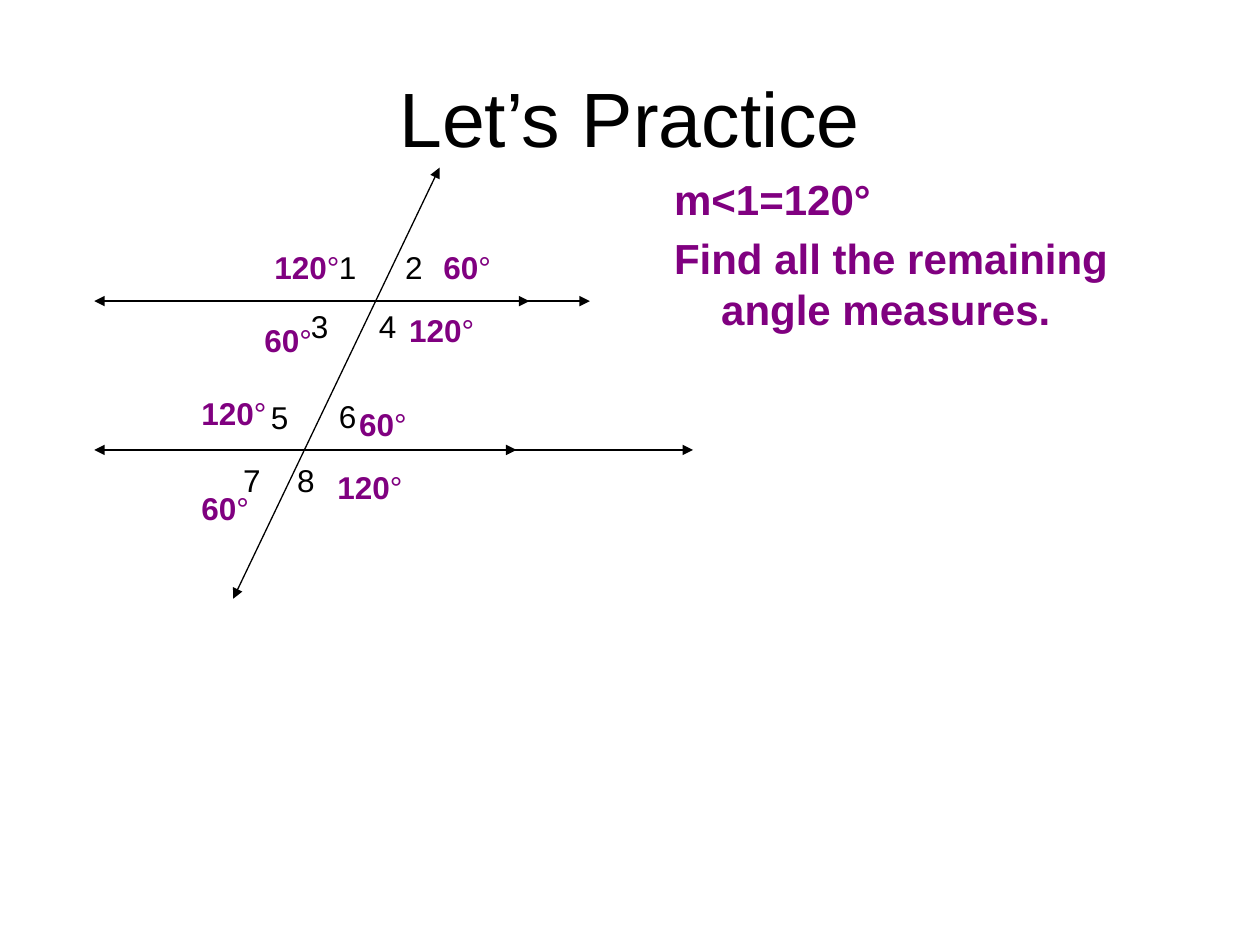
from dataclasses import dataclass

from lxml.etree import SubElement
from pptx import Presentation
from pptx.dml.color import RGBColor
from pptx.enum.shapes import MSO_CONNECTOR as Connector
from pptx.enum.text import MSO_ANCHOR as Anchor, MSO_AUTO_SIZE as AutoSize, PP_ALIGN as Align
from pptx.oxml.ns import qn
from pptx.util import Cm, Pt

COLORS = {"ink": "000000", "answer": "800080"}
FONT = "Arial"
LABEL_HEIGHT = 1.02
NUMBER_WIDTH = 1.09


@dataclass
class Arrow:
    start: tuple[float, float]
    end: tuple[float, float]
    both_ends: bool = True


@dataclass
class Label:
    text: str
    left: float
    top: float


# All lengths are in centimetres
UPPER, LOWER = 6.07, 9.07
ARROWS = [
    Arrow((1.9, UPPER), (11.89, UPPER)),
    Arrow((1.9, LOWER), (13.97, LOWER)),
    Arrow((8.86, 3.38), (4.7, 12.07)),
    Arrow((9.3, LOWER), (10.41, LOWER), both_ends=False),
    Arrow((9.58, UPPER), (10.67, UPPER), both_ends=False),
]
NUMBERS = [
    Label("1", 6.58, 4.88), Label("2", 7.92, 4.88),
    Label("3", 6.02, 6.07), Label("4", 7.39, 6.07),
    Label("5", 5.21, 7.9), Label("6", 6.58, 7.87),
    Label("7", 4.65, 9.17), Label("8", 5.74, 9.17),
]
ANSWERS = [
    Label("60", 8.69, 4.88), Label("60", 5.08, 6.35),
    Label("60", 6.99, 8.05), Label("60", 3.81, 9.73),
    Label("120", 5.28, 4.88), Label("120", 8.0, 6.15),
    Label("120", 6.55, 9.32), Label("120", 3.81, 7.82),
]
ANSWER_WIDTHS = {"60": 1.47, "120": 2.11}


def add_box(shapes, left: float, top: float, width: float, height: float, **frame_format):
    box = shapes.add_textbox(Cm(left), Cm(top), Cm(width), Cm(height))
    for name, value in {"word_wrap": True, **frame_format}.items():
        setattr(box.text_frame, name, value)
    return box


def add_span(para, text: str, size: float, color: str, bold: bool = False) -> None:
    span = para.add_run()
    span.text = text
    for name, value in {"name": FONT, "size": Pt(size), "bold": bold}.items():
        setattr(span.font, name, value)
    span.font.color.rgb = RGBColor.from_string(COLORS[color])


def add_arrow(shapes, arrow: Arrow) -> None:
    points = [Cm(value) for value in (*arrow.start, *arrow.end)]
    line = shapes.add_connector(Connector.STRAIGHT, *points)
    line.line.width = Pt(0.75)
    line.line.color.rgb = RGBColor.from_string(COLORS["ink"])
    outline = line.line._get_or_add_ln()
    for tag in ("a:headEnd", "a:tailEnd") if arrow.both_ends else ("a:tailEnd",):
        SubElement(outline, qn(tag), type="triangle")
    SubElement(line._element.spPr, qn("a:effectLst"))


def add_label(shapes, label: Label, width: float):
    box = add_box(shapes, label.left, label.top, width, LABEL_HEIGHT,
                  auto_size=AutoSize.SHAPE_TO_FIT_TEXT)
    return box.text_frame.paragraphs[0]


def main() -> None:
    deck = Presentation()
    deck.slide_width, deck.slide_height = Cm(25.4), Cm(19.05)
    page = deck.slides.add_slide(deck.slide_layouts[6])

    # Title
    title = add_box(page.shapes, 1.27, 0.76, 22.86, 3.18, vertical_anchor=Anchor.MIDDLE)
    para = title.text_frame.paragraphs[0]
    para.alignment = Align.CENTER
    add_span(para, "Let’s Practice", 44, "ink")

    # Task with hanging indent
    task = add_box(page.shapes, 13.34, 3.38, 11, 3.81).text_frame
    lines = ("m<1=120°", "Find all the remaining angle measures.")
    for index, text in enumerate(lines):
        para = task.add_paragraph() if index else task.paragraphs[0]
        para.space_before = Pt(5)
        properties = para._p.get_or_add_pPr()
        for name, value in {"marL": Cm(0.95), "indent": Cm(-0.95)}.items():
            properties.set(name, str(int(value)))
        add_span(para, text, 24, "answer", bold=True)

    # Parallel lines, transversal and angle numbers
    diagram = page.shapes.add_group_shape().shapes
    for arrow in ARROWS:
        add_arrow(diagram, arrow)
    for number in NUMBERS:
        add_span(add_label(diagram, number, NUMBER_WIDTH), number.text, 18, "ink")

    # Angle measures
    for answer in ANSWERS:
        para = add_label(page.shapes, answer, ANSWER_WIDTHS[answer.text])
        add_span(para, answer.text, 18, "answer", bold=True)
        add_span(para, "°", 18, "answer")

    deck.save("out.pptx")


if __name__ == "__main__":
    main()
